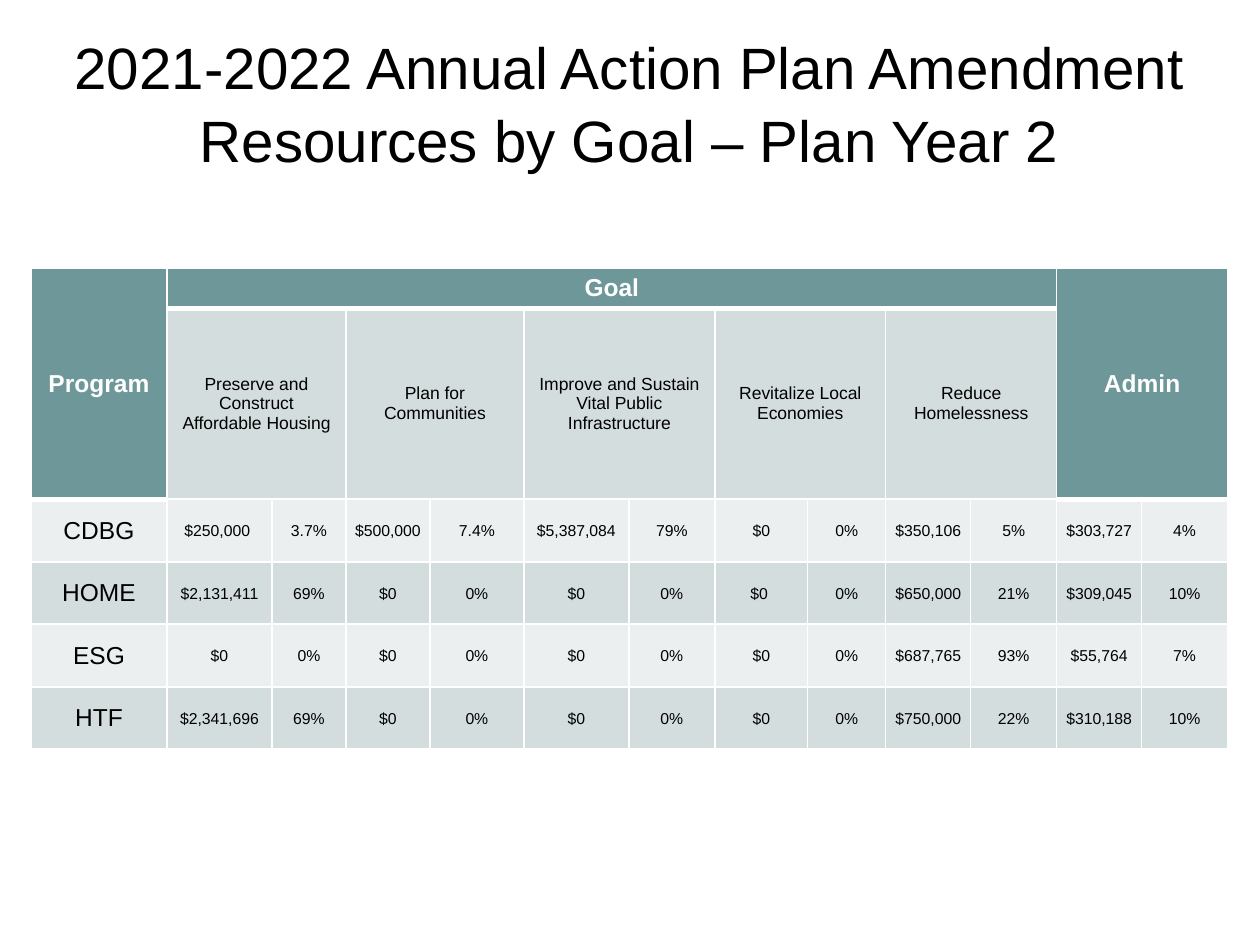
"""Build the slide of plan year 2 resources by goal and program."""
from lxml.etree import SubElement
from pptx import Presentation
from pptx.dml.color import RGBColor
from pptx.enum.text import MSO_ANCHOR, MSO_AUTO_SIZE, PP_ALIGN
from pptx.oxml.ns import qn
from pptx.util import Emu, Pt

TITLE = ["2021-2022 Annual Action Plan Amendment", "Resources by Goal – Plan Year 2"]
GOALS = [
    "Preserve and Construct Affordable Housing",
    "Plan for Communities",
    "Improve and Sustain Vital Public Infrastructure",
    "Revitalize Local Economies",
    "Reduce Homelessness",
]
PROGRAMS = [
    ["CDBG", "$250,000 ", "3.7%", "$500,000", "7.4%", "$5,387,084", "79%",
     "$0", "0%", "$350,106", "5%", "$303,727", "4%"],
    ["HOME", "$2,131,411", "69%", "$0", "0%", "$0", "0%",
     "$0 ", "0%", "$650,000", "21%", "$309,045", "10%"],
    ["ESG", "$0", "0%", "$0", "0%", "$0", "0%",
     "$0", "0%", "$687,765", "93%", "$55,764", "7%"],
    ["HTF", "$2,341,696", "69%", "$0", "0%", "$0", "0%",
     "$0", "0%", "$750,000", "22%", "$310,188", "10%"],
]
COLORS = {"header": "6D9799", "dark": "D4DDDE", "light": "EBEFEF",
          "white": "FFFFFF", "black": "000000"}
FONT = "Arial"
TITLE_SIZE = 33.3
COLUMNS = [136, 105, 74, 84, 94, 105, 86, 93, 78, 85, 86, 85, 86]
ROWS = [40, 191, 63, 62, 63, 62]
LEFT, TITLE_TOP, TABLE_TOP = 31, 23, 268
WIDTH, TITLE_HEIGHT = sum(COLUMNS), 157


def px(length):
    return Emu(round(length * 914400 / 126))


def color(name):
    return RGBColor.from_string(COLORS[name])


def add_span(para, text, size, ink, bold=False):
    span = para.add_run()
    span.text = text
    span.font.name = FONT
    span.font.size = Pt(size)
    span.font.bold = bold
    span.font.color.rgb = color(ink)


def write_cell(cell, text, size, ink="black", bold=False, amount=False):
    cell.vertical_anchor = MSO_ANCHOR.MIDDLE
    para = cell.text_frame.paragraphs[0]
    para.alignment = PP_ALIGN.CENTER
    if amount:
        cell.margin_left = cell.margin_right = px(5)
        cell.margin_top = cell.margin_bottom = 0
        para.line_spacing = 1.07
    add_span(para, text, size, ink, bold)


def style_cell(cell, fill, bottom, first_row):
    properties = cell._tc.get_or_add_tcPr()
    edges = {"lnL": 1, "lnR": 1, "lnT": 1, "lnB": bottom}
    if not first_row:
        del edges["lnT"]
    for edge, points in edges.items():
        line = SubElement(properties, qn(f"a:{edge}"), w=str(Pt(points)))
        solid = SubElement(line, qn("a:solidFill"))
        SubElement(solid, qn("a:srgbClr"), val=COLORS["white"])
    cell.fill.solid()
    cell.fill.fore_color.rgb = color(fill)


def add_title(page):
    box = page.shapes.title
    box.left, box.top, box.width, box.height = map(
        px, (LEFT, TITLE_TOP, WIDTH, TITLE_HEIGHT))
    frame = box.text_frame
    frame.word_wrap = True
    frame.auto_size = MSO_AUTO_SIZE.NONE
    frame.vertical_anchor = MSO_ANCHOR.MIDDLE
    para = frame.paragraphs[0]
    para.alignment = PP_ALIGN.CENTER
    para.line_spacing = 1.04
    add_span(para, TITLE[0], TITLE_SIZE, "black")
    para.add_line_break()
    SubElement(para._p.find(qn("a:br")), qn("a:rPr"), sz=str(round(TITLE_SIZE * 100)))
    add_span(para, TITLE[1], TITLE_SIZE, "black")


def add_resources(page):
    table = page.shapes.add_table(
        len(ROWS), len(COLUMNS), px(LEFT), px(TABLE_TOP), px(WIDTH), px(sum(ROWS))).table
    for column, width in zip(table.columns, COLUMNS):
        column.width = px(width)
    for row, height in zip(table.rows, ROWS):
        row.height = px(height)

    admin = 1 + 2 * len(GOALS)
    for r in range(len(ROWS)):
        for c in range(len(COLUMNS)):
            header = r == 0 or (r == 1 and not 1 <= c < admin)
            fill = "header" if header else "dark" if r % 2 else "light"
            style_cell(table.cell(r, c), fill, 3 if header else 1, r == 0)

    headers = [("Program", 0, 1, 0), ("Goal", 1, 0, admin - 1), ("Admin", admin, 1, admin + 1)]
    for text, first, last_row, last in headers:
        cell = table.cell(0, first)
        cell.merge(table.cell(last_row, last))
        write_cell(cell, text, 14, "white", bold=True)
    for index, goal in enumerate(GOALS):
        first = 1 + 2 * index
        cell = table.cell(1, first)
        cell.merge(table.cell(1, first + 1))
        write_cell(cell, goal, 10)
    for r, (program, *amounts) in enumerate(PROGRAMS, start=2):
        write_cell(table.cell(r, 0), program, 14)
        for c, amount in enumerate(amounts, start=1):
            write_cell(table.cell(r, c), amount, 9, amount=True)


def main():
    deck = Presentation()
    deck.slide_width, deck.slide_height = px(1260), px(945)
    page = deck.slides.add_slide(deck.slide_layouts[5])
    add_title(page)
    add_resources(page)
    deck.save("out.pptx")


if __name__ == "__main__":
    main()
